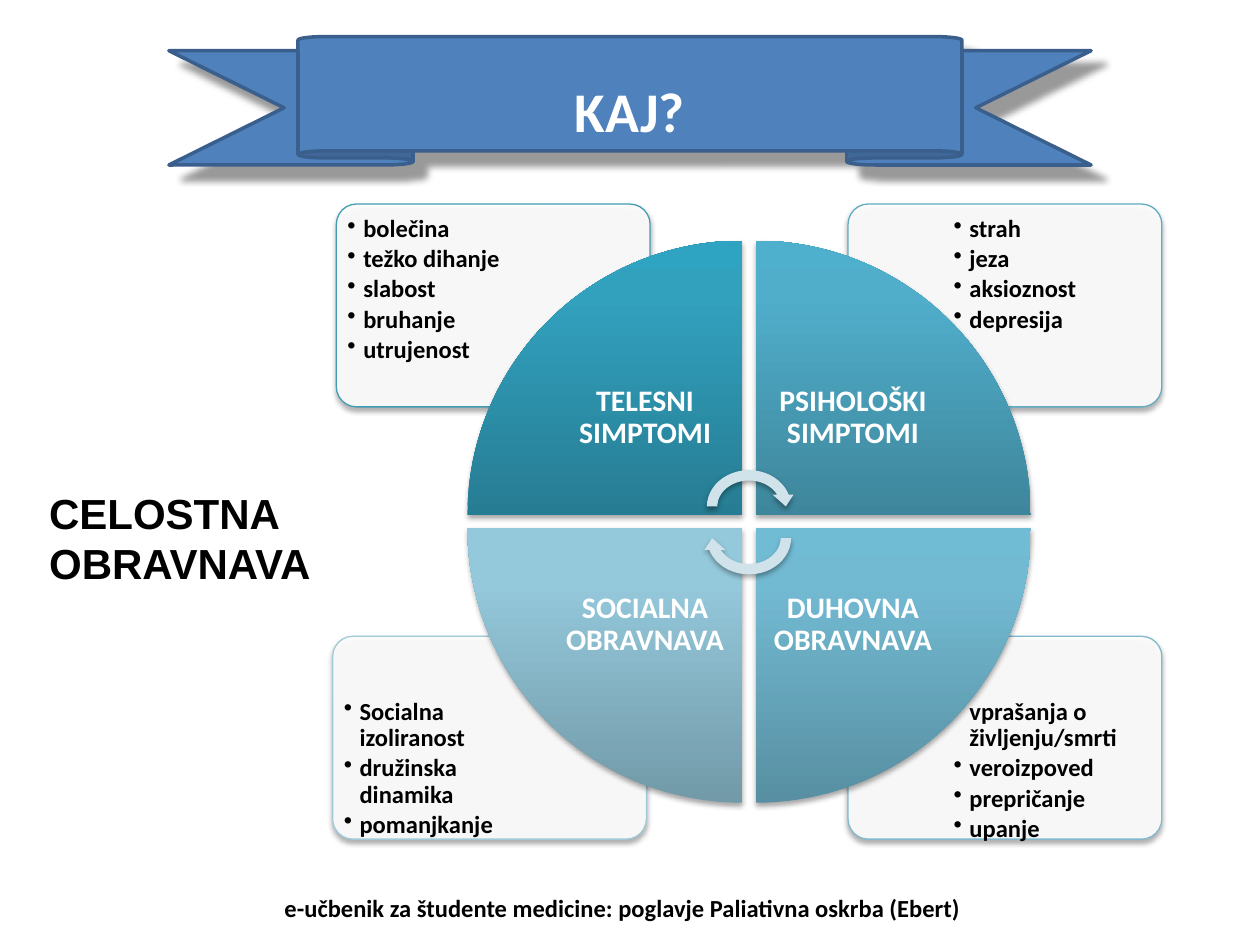
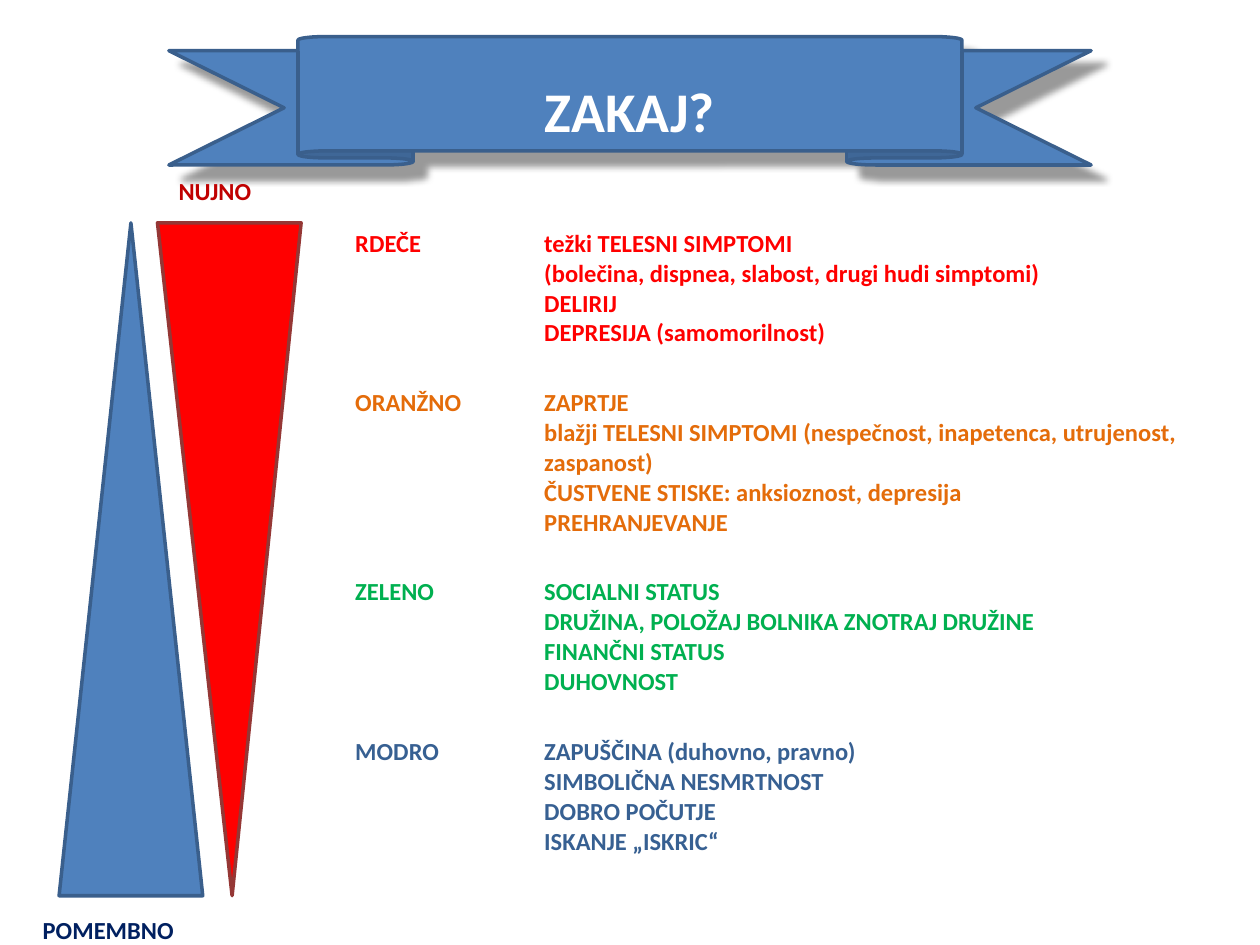
from dataclasses import dataclass

from lxml.etree import SubElement
from pptx import Presentation
from pptx.dml.color import RGBColor
from pptx.enum.shapes import MSO_SHAPE as Form
from pptx.enum.text import MSO_ANCHOR as Anchor, PP_ALIGN as Align
from pptx.oxml.ns import qn
from pptx.util import Pt

FONT = "Calibri"
BLACK, WHITE, BLUE, NAVY = "000000", "FFFFFF", "4F81BD", "3A5F8C"


@dataclass(frozen=True)
class Box:
    left: float
    top: float
    width: float
    height: float

    def points(self) -> tuple:
        return Pt(self.left), Pt(self.top), Pt(self.width), Pt(self.height)


@dataclass(frozen=True)
class Shade:
    alpha: int
    blur: float
    dist: float
    angle: int


@dataclass(frozen=True)
class Sector:
    """One quarter of the wheel with its card of details."""
    right: bool
    low: bool
    card: float
    edge: str
    stops: tuple
    turn: int
    title: str
    items: tuple


@dataclass(frozen=True)
class Level:
    name: str
    color: str
    height: float
    lines: tuple


SOFT = Shade(35, 3.1, 1.8, 90)
DEEP = Shade(40, 4, 10, 45)

RIBBON = Box(96.5, 20.9, 527, 73.4)
WHEEL_X, WHEEL_Y, WEDGE = (267.1, 432), (137.5, 301.7), 157
CARD_Y, CARD_W, CARD_H = (116.6, 363.6), 179.3, 115.9
LIST_X, LIST_Y = (2.2, 56.2), (2.9, 31.7)
TITLE = 110.9

SECTORS = (
    Sector(True, True, 484.6, "81BACE", ("588FA2", "72BAD2", "71BCD5"), 180,
           "DUHOVNA OBRAVNAVA",
           ("vprašanja o življenju/smrti", "veroizpoved", "prepričanje",
            "upanje")),
    Sector(False, True, 190.1, "A1CAD9", ("729AA8", "94C8DB", "93C9DD"), 270,
           "SOCIALNA OBRAVNAVA",
           ("Socialna izoliranost", "družinska dinamika", "pomanjkanje")),
    Sector(True, False, 484.6, "61ACC2", ("3E869C", "50AECA", "4EB0CD"), 90,
           "PSIHOLOŠKI SIMPTOMI",
           ("strah", "jeza", "aksioznost", "depresija")),
    Sector(False, False, 192.2, "449CB4", ("267C93", "32A1BE", "2FA3C2"), 0,
           "TELESNI SIMPTOMI",
           ("bolečina", "težko dihanje", "slabost", "bruhanje",
            "utrujenost")),
)

LEVELS = (
    Level("RDEČE", "FF0000", 91,
          ("težki TELESNI SIMPTOMI",
           "(bolečina, dispnea, slabost, drugi hudi simptomi)",
           "DELIRIJ", "DEPRESIJA (samomorilnost)")),
    Level("ORANŽNO", "E46C0A", 108,
          ("ZAPRTJE",
           "blažji TELESNI SIMPTOMI (nespečnost, inapetenca, utrujenost, "
           "zaspanost)",
           "ČUSTVENE STISKE: anksioznost, depresija", "PREHRANJEVANJE")),
    Level("ZELENO", "00B050", 91.5,
          ("SOCIALNI STATUS", "DRUŽINA, POLOŽAJ BOLNIKA ZNOTRAJ DRUŽINE",
           "FINANČNI STATUS", "DUHOVNOST")),
    Level("MODRO", "376092", 114.2,
          ("ZAPUŠČINA (duhovno, pravno)", "SIMBOLIČNA NESMRTNOST",
           "DOBRO POČUTJE", "ISKANJE „ISKRIC“")),
)


def tint(color, value: str) -> None:
    color.rgb = RGBColor.from_string(value)


def add_color(parent, value: str, alpha: int = 100) -> None:
    node = SubElement(parent, qn("a:srgbClr"), val=value)
    if alpha < 100:
        SubElement(node, qn("a:alpha"), val=str(alpha * 1000))


def write(frame, lines, *, size=14, color=BLACK, font=FONT, align=Align.LEFT,
          anchor=None, pad=None, space=None, after=None, bullet=False) -> None:
    """Fill a text frame with one bold paragraph per line."""
    if anchor is not None:
        frame.vertical_anchor = anchor
    if pad is not None:
        frame.margin_left = frame.margin_right = Pt(pad)
        frame.margin_top = frame.margin_bottom = Pt(pad)
    for i, line in enumerate(lines):
        para = frame.add_paragraph() if i else frame.paragraphs[0]
        para.alignment = align
        if space:
            para.line_spacing = space
        if after:
            para.space_after = Pt(after)
        if bullet:
            props = para._p.get_or_add_pPr()
            props.set("marL", str(Pt(9)))
            props.set("indent", str(Pt(-9)))
            SubElement(props, qn("a:buChar"), char="•")
        run = para.add_run()
        run.text = line
        run.font.size, run.font.bold, run.font.name = Pt(size), True, font
        tint(run.font.color, color)


def label(slide, box: Box, lines, **style) -> None:
    frame = slide.shapes.add_textbox(*box.points()).text_frame
    frame.word_wrap = True
    write(frame, lines, **style)


def draw(slide, form, box: Box, fill: str, *, alpha=100, line=None, width=2,
         shade=None, turn=0):
    shape = slide.shapes.add_shape(form, *box.points())
    shape.rotation = turn
    shape.fill.solid()
    tint(shape.fill.fore_color, fill)
    props = shape.element.spPr
    if alpha < 100:
        solid = props.find(qn("a:solidFill"))
        solid.clear()
        add_color(solid, fill, alpha)
    if line:
        tint(shape.line.color, line)
        shape.line.width = Pt(width)
    else:
        shape.line.fill.background()
    shape.shadow.inherit = False
    if shade:
        node = SubElement(props.find(qn("a:effectLst")), qn("a:outerShdw"),
                          blurRad=str(Pt(shade.blur)),
                          dist=str(Pt(shade.dist)),
                          dir=str(shade.angle * 60000), rotWithShape="0")
        add_color(node, BLACK, shade.alpha)
    return shape


def blend(shape, stops: tuple) -> None:
    """Give a gradient that runs upward however the shape is turned."""
    shape.fill.gradient()
    grad = shape.element.spPr.find(qn("a:gradFill"))
    grad.clear()
    grad.set("rotWithShape", "0")
    group = SubElement(grad, qn("a:gsLst"))
    for place, color in zip((0, 80, 100), stops):
        add_color(SubElement(group, qn("a:gs"), pos=str(place * 1000)), color)
    SubElement(grad, qn("a:lin"), ang=str(270 * 60000), scaled="0")


def ribbon(slide, title: str) -> None:
    shape = draw(slide, Form.UP_RIBBON, RIBBON, BLUE, line=NAVY, shade=DEEP)
    shape.adjustments[0], shape.adjustments[1] = 0.11, 0.72
    write(shape.text_frame, [title], size=32, color=WHITE,
          align=Align.CENTER, anchor=Anchor.MIDDLE, space=1.5)


def card(slide, part: Sector) -> None:
    top = CARD_Y[part.low]
    shape = draw(slide, Form.ROUNDED_RECTANGLE,
                 Box(part.card, top, CARD_W, CARD_H), WHITE, alpha=90,
                 line=part.edge, width=0.75, shade=SOFT)
    shape.adjustments[0] = 0.1
    label(slide, Box(part.card + LIST_X[part.right], top + LIST_Y[part.low],
                     120.2, 82),
          part.items, pad=4.2, space=0.9, after=2.1, bullet=True)


def wedge(slide, part: Sector) -> None:
    left, top = WHEEL_X[part.right], WHEEL_Y[part.low]
    shape = draw(slide, Form.PIE_WEDGE, Box(left, top, WEDGE, WEDGE),
                 part.stops[0], shade=SOFT, turn=part.turn)
    blend(shape, part.stops)
    inset = WEDGE - TITLE
    label(slide, Box(left + inset * (not part.right),
                     top + inset * (not part.low), TITLE, TITLE),
          [part.title], size=17, color=WHITE, align=Align.CENTER,
          anchor=Anchor.MIDDLE, pad=9.4, space=0.9)


def build_what(slide) -> None:
    for part in SECTORS:
        card(slide, part)
    for part in SECTORS:
        wedge(slide, part)
    for top, turn in ((265.7, 0), (283.7, 180)):
        draw(slide, Form.CIRCULAR_ARROW, Box(401, top, 54, 47.5), "D0E3EA",
             shade=SOFT, turn=turn)
    care = draw(slide, Form.RECTANGLE, Box(13.7, 264.2, 249.1, 87.1), WHITE,
                alpha=70)
    write(care.text_frame, ["CELOSTNA", "OBRAVNAVA"], size=24, font="Arial",
          anchor=Anchor.TOP, pad=14.4)
    ribbon(slide, "KAJ?")
    label(slide, Box(38.2, 506.9, 635, 24.5),
          ["e-učbenik za študente medicine: poglavje Paliativna oskrba "
           "(Ebert)"], align=Align.CENTER)


def level_table(slide) -> None:
    box = Box(195.8, 127.4, 515.5, sum(level.height for level in LEVELS))
    table = slide.shapes.add_table(len(LEVELS), 2, *box.points()).table
    table.first_row = table.horz_banding = False
    table.columns[0].width, table.columns[1].width = Pt(108), Pt(407.5)
    for row, level in zip(table.rows, LEVELS):
        row.height = Pt(level.height)
        for cell, lines in zip(row.cells, ([level.name], level.lines)):
            cell.fill.background()
            write(cell.text_frame, lines, color=level.color)


def build_why(slide) -> None:
    level_table(slide)
    ribbon(slide, "ZAKAJ?")
    draw(slide, Form.ISOSCELES_TRIANGLE, Box(33.8, 127.4, 82.1, 384.5), BLUE,
         line=NAVY)
    urgent = draw(slide, Form.ISOSCELES_TRIANGLE,
                  Box(90, 127.4, 82.1, 384.5), "FF0000", line="953735")
    urgent.adjustments[0] = 0.52
    urgent.element.spPr.xfrm.set("flipV", "1")
    label(slide, Box(95, 97.2, 72, 24.5), ["NUJNO"], color="C00000")
    label(slide, Box(17.3, 519.1, 111.6, 24.5), ["POMEMBNO"], color="002060")


def main() -> None:
    deck = Presentation()
    deck.slide_width, deck.slide_height = Pt(720), Pt(540)
    for build in (build_what, build_why):
        build(deck.slides.add_slide(deck.slide_layouts[6]))
    deck.save("out.pptx")


if __name__ == "__main__":
    main()
